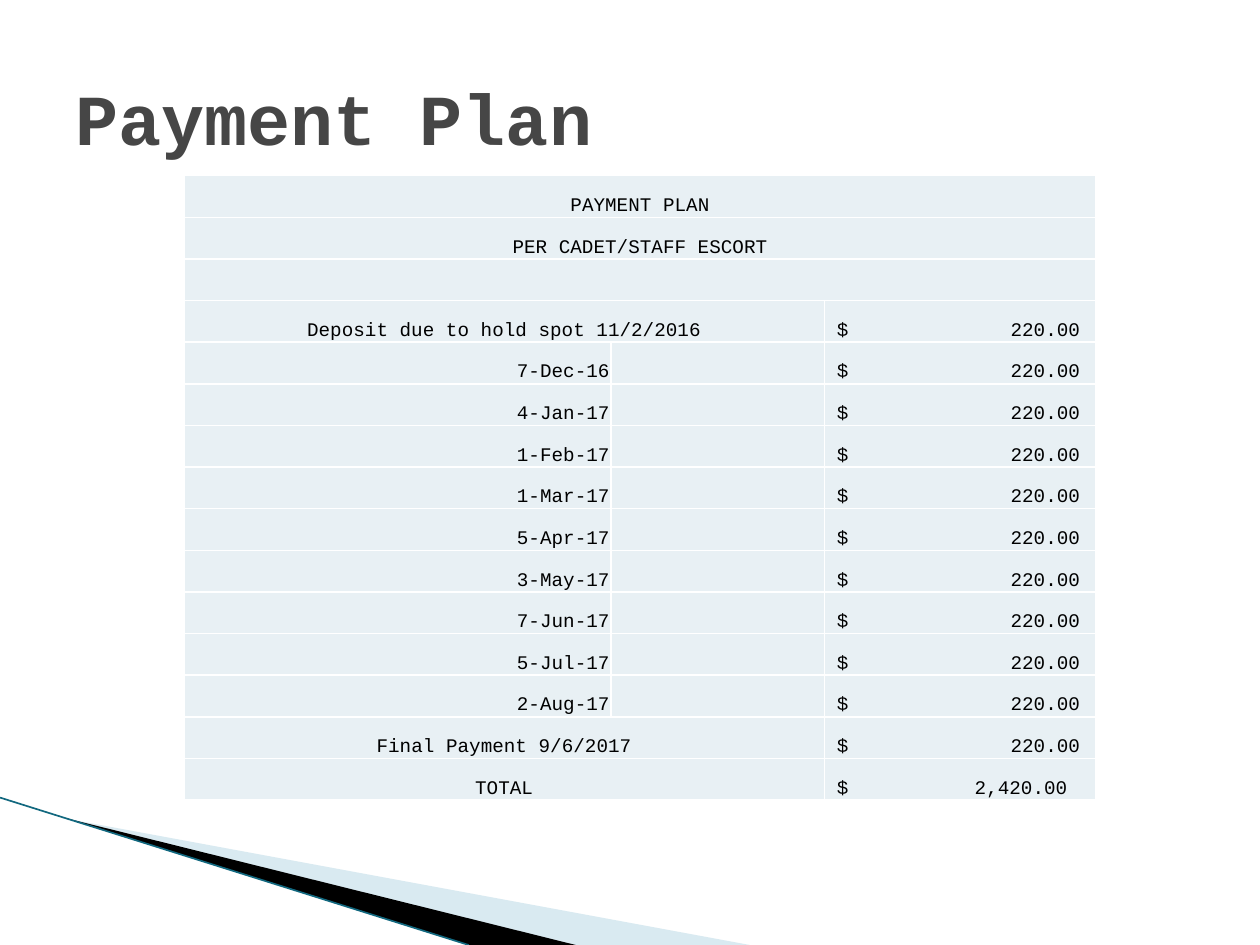
from lxml import etree
from pptx import Presentation
from pptx import util as u
from pptx.dml.color import RGBColor
from pptx.enum import shapes, text
from pptx.oxml.ns import qn

COLORS = {
    "title": "464646", "ink": "000000", "cell": "E8F0F4",
    "rule": "FFFFFF", "pale": "A0CBDC", "edge": "12687F",
}
FONT = "Courier New"
WIDTH, HEIGHT = 10, 7.5
DUE_DATES = ["7-Dec-16", "4-Jan-17", "1-Feb-17", "1-Mar-17", "5-Apr-17",
             "3-May-17", "7-Jun-17", "5-Jul-17", "2-Aug-17"]
INSTALMENT = "220.00"
HEADINGS = ["PAYMENT PLAN", "PER CADET/STAFF ESCORT", ""]
PAYMENTS = (
    [("Deposit due to hold spot 11/2/2016", INSTALMENT)]
    + [(date, INSTALMENT) for date in DUE_DATES]
    + [("Final Payment 9/6/2017", INSTALMENT), ("TOTAL", "2,420.00")]
)
COLUMN_SHARES = [0.468, 0.234, 0.298]
LEFT, CENTER, RIGHT = text.PP_ALIGN.LEFT, text.PP_ALIGN.CENTER, text.PP_ALIGN.RIGHT


def rgb(name):
    return RGBColor.from_string(COLORS[name])


def write(frame, words, size=11, color="ink", bold=False, align=LEFT, tab=None):
    paragraph = frame.paragraphs[0]
    paragraph.alignment = align
    if tab:
        stops = etree.SubElement(paragraph._p.get_or_add_pPr(), qn("a:tabLst"))
        etree.SubElement(stops, qn("a:tab"), pos=str(u.Inches(tab)), algn="r")
    run = paragraph.add_run()
    run.text = words
    run.font.name = FONT
    run.font.size = u.Pt(size)
    run.font.bold = bold
    run.font.color.rgb = rgb(color)


def style_cell(cell):
    cell.fill.solid()
    cell.fill.fore_color.rgb = rgb("cell")
    cell.vertical_anchor = text.MSO_ANCHOR.BOTTOM
    cell.margin_left = cell.margin_right = cell.margin_top = u.Inches(0.01)
    cell.margin_bottom = 0
    properties = cell._tc.get_or_add_tcPr()
    for index, side in enumerate(("lnL", "lnR", "lnT", "lnB")):
        border = etree.Element(qn(f"a:{side}"), w=str(u.Pt(1)))
        fill = etree.SubElement(border, qn("a:solidFill"))
        etree.SubElement(fill, qn("a:srgbClr"), val=COLORS["rule"])
        properties.insert(index, border)


def add_wedge(slide, points, color, opacity=100):
    start, *rest = [(u.Inches(x * WIDTH), u.Inches(y * HEIGHT)) for x, y in points]
    builder = slide.shapes.build_freeform(*start)
    builder.add_line_segments(rest, close=True)
    wedge = builder.convert_to_shape()
    wedge.shadow.inherit = False
    wedge.line.fill.background()
    wedge.fill.solid()
    wedge.fill.fore_color.rgb = rgb(color)
    if opacity < 100:
        tint = wedge.fill._xPr.find(".//" + qn("a:srgbClr"))
        etree.SubElement(tint, qn("a:alpha"), val=str(opacity * 1000))


def add_corner(slide):
    add_wedge(slide, [(0.055, 0.867), (0.595, 1), (0.456, 1)], "pale", 40)
    add_wedge(slide, [(0.053, 0.866), (0.457, 1), (0.372, 1)], "ink")
    edge = slide.shapes.add_connector(
        shapes.MSO_CONNECTOR.STRAIGHT, u.Inches(0), u.Inches(0.844 * HEIGHT),
        u.Inches(0.372 * WIDTH), u.Inches(HEIGHT))
    edge.line.color.rgb = rgb("edge")
    edge.line.width = u.Pt(0.95)
    etree.SubElement(edge._element.spPr, qn("a:effectLst"))


def add_title(slide, left, top, width, height):
    title = slide.shapes.title
    title.left, title.top = u.Inches(left), u.Inches(top)
    title.width, title.height = u.Inches(width), u.Inches(height)
    frame = title.text_frame
    frame.auto_size = text.MSO_AUTO_SIZE.NONE
    frame.vertical_anchor = text.MSO_ANCHOR.MIDDLE
    write(frame, "Payment Plan", size=41, color="title", bold=True)


def add_payments(slide, left, top, width, height):
    count = len(HEADINGS) + len(PAYMENTS)
    table = slide.shapes.add_table(
        count, len(COLUMN_SHARES), u.Inches(left), u.Inches(top),
        u.Inches(width), u.Inches(height)).table
    table.first_row = table.horz_banding = False
    for column, share in zip(table.columns, COLUMN_SHARES):
        column.width = u.Inches(width * share)
    for row in table.rows:
        row.height = u.Inches(height / count)
    for cell in table.iter_cells():
        style_cell(cell)

    for row, heading in enumerate(HEADINGS):
        table.cell(row, 0).merge(table.cell(row, 2))
        if heading:
            write(table.cell(row, 0).text_frame, heading, align=CENTER)

    for row, (due, amount) in enumerate(PAYMENTS, len(HEADINGS)):
        dated = due in DUE_DATES
        if not dated:
            table.cell(row, 0).merge(table.cell(row, 1))
        write(table.cell(row, 0).text_frame, due, align=RIGHT if dated else CENTER)
        price = table.cell(row, 2)
        price.margin_left = u.Inches(0.1)
        write(price.text_frame, f"$\t{amount}", tab=1.83 if due == "TOTAL" else 1.93)


def main():
    deck = Presentation()
    deck.slide_width, deck.slide_height = u.Inches(WIDTH), u.Inches(HEIGHT)
    slide = deck.slides.add_slide(deck.slide_layouts[5])
    add_corner(slide)
    add_title(slide, 0.05 * WIDTH, 0.04 * HEIGHT, 0.9 * WIDTH, HEIGHT / 6)
    add_payments(slide, 0.146 * WIDTH, 0.186 * HEIGHT, 0.724 * WIDTH, 0.661 * HEIGHT)
    deck.save("out.pptx")


if __name__ == "__main__":
    main()
